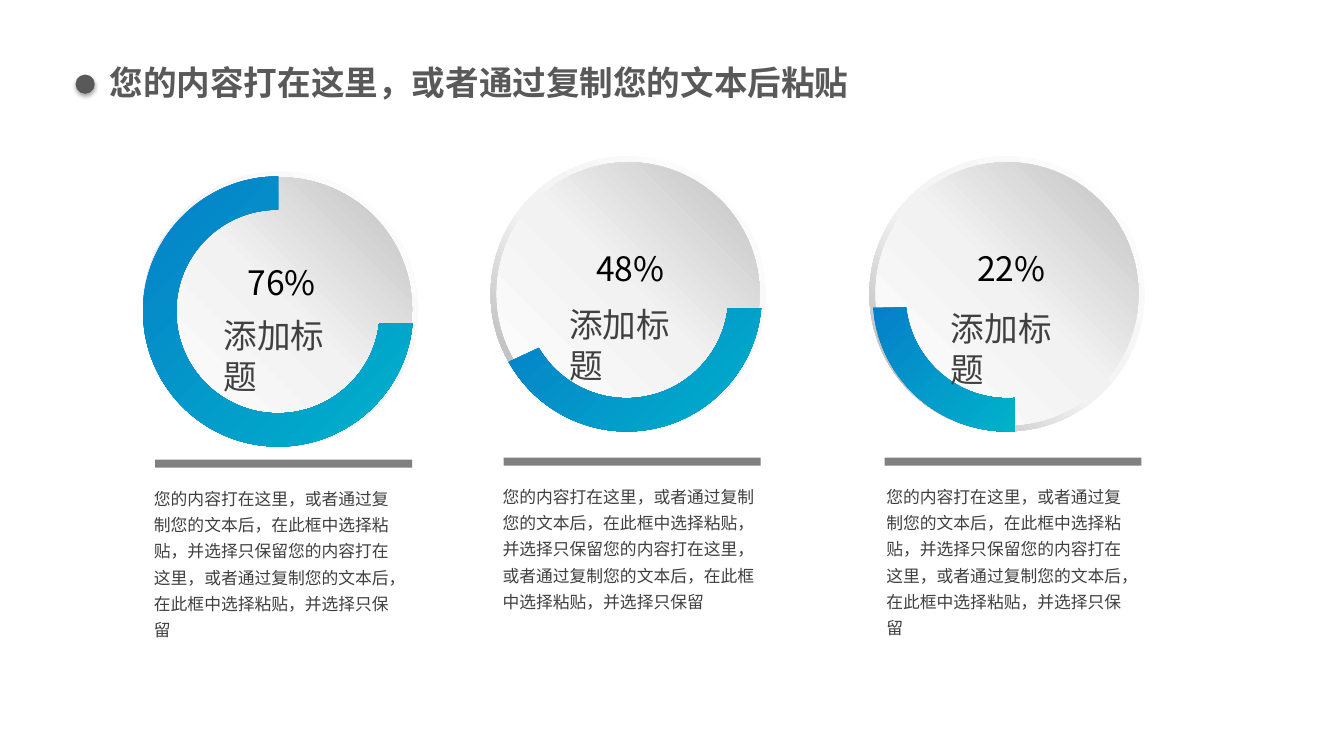
from math import ceil, cos, floor, radians, sin, tan

from lxml.etree import SubElement
from pptx import Presentation
from pptx.dml.color import RGBColor
from pptx.enum.shapes import MSO_SHAPE as Preset
from pptx.oxml.ns import qn
from pptx.util import Inches, Pt

HEADING = "您的内容打在这里，或者通过复制您的文本后粘贴"
LABEL = "添加标题"
BODY = (
    "您的内容打在这里，或者通过复制您的文本后，在此框中选择粘贴，并选择只保留"
    "您的内容打在这里，或者通过复制您的文本后，在此框中选择粘贴，并选择只保留"
)
DIALS = [
    {"percent": "76%", "left": 1.42, "top": 1.7, "arc_center": 2.76,
     "outer": (5.1, 270), "inner": (6.8, 270), "percent_at": (2.36, 2.55),
     "label_at": (2.12, 3.08), "bar_at": (1.54, 4.56), "body_at": (1.43, 4.74),
     "body_size": (2.63, 1.94)},
    {"percent": "48%", "left": 4.87, "top": 1.55, "arc_center": 6.22,
     "outer": (5.1, 151), "inner": (6.8, 149.6), "percent_at": (5.82, 2.41),
     "label_at": (5.55, 2.97), "bar_at": (5, 4.54), "body_at": (4.89, 4.72),
     "body_size": (2.75, 1.68)},
    {"percent": "22%", "left": 8.63, "top": 1.55, "arc_center": 10,
     "outer": (87, 175.3), "inner": (86, 173.8), "percent_at": (9.6, 2.41),
     "label_at": (9.34, 3.01), "bar_at": (8.78, 4.54), "body_at": (8.7, 4.72),
     "body_size": (2.67, 1.94)},
]
COLORS = {"heading": "595959", "bar": "808080", "text": "404040", "percent": "000000"}
RING_STOPS = [(0, "FFFFFF"), (55, "F2F2F2"), (100, "A6A6A6")]
FACE_STOPS = [(0, "FFFFFF"), (51, "F2F2F2"), (100, "BFBFBF")]
ARC_STOPS = [(0, "067FC9"), (100, "00B2CA")]
FONT = "Noto Sans CJK SC"
RING_SIZE, FACE_SIZE, RING_RATIO = 2.73, 2.61, 0.05
ARC_DROP, OUTER_RADIUS, INNER_RADIUS = 1.39, 1.34, 1.01


def add_text(slide, text, left, top, width, height, size=24, color="text",
             bold=False, spacing=28.8):
    box = slide.shapes.add_textbox(*map(Inches, (left, top, width, height)))
    box.text_frame.word_wrap = True
    paragraph = box.text_frame.paragraphs[0]
    paragraph.line_spacing = Pt(spacing)
    run = paragraph.add_run()
    run.text = text
    font = run.font
    font.size, font.bold, font.name = Pt(size), bold, FONT
    font.color.rgb = RGBColor.from_string(COLORS[color])
    SubElement(run._r.get_or_add_rPr(), qn("a:ea"), typeface=FONT)


def add_preset(slide, preset, left, top, width, height, color=None):
    shape = slide.shapes.add_shape(preset, *map(Inches, (left, top, width, height)))
    shape.shadow.inherit = False
    shape.line.fill.background()
    if color:
        shape.fill.solid()
        shape.fill.fore_color.rgb = RGBColor.from_string(COLORS[color])
    return shape


def fill_gradient(shape, stops, angle):
    shape.fill.gradient()
    gradient = shape._element.spPr.find(qn("a:gradFill"))
    for child in list(gradient):
        gradient.remove(child)
    stop_list = SubElement(gradient, qn("a:gsLst"))
    for position, color in stops:
        stop = SubElement(stop_list, qn("a:gs"), pos=str(position * 1000))
        SubElement(stop, qn("a:srgbClr"), val=color)
    SubElement(gradient, qn("a:lin"), ang=str(angle * 60000), scaled="0")


def add_shadow(shape):
    effects = shape._element.spPr.find(qn("a:effectLst"))
    shadow = SubElement(effects, qn("a:outerShdw"), blurRad=str(Pt(3.1)),
                        dist=str(Pt(1.8)), dir=str(90 * 60000), rotWithShape="0")
    color = SubElement(shadow, qn("a:srgbClr"), val="000000")
    SubElement(color, qn("a:alpha"), val="35000")


def arc_points(center_x, center_y, radius, start, end):
    """Return Bezier points of an arc that is split at each quarter turn."""
    quarters = range(floor(start / 90) + 1, ceil(end / 90))
    angles = [radians(angle) for angle in (start, *(90 * q for q in quarters), end)]

    def point(angle, reach):
        return (Inches(center_x + radius * (cos(angle) - reach * sin(angle))),
                Inches(center_y + radius * (sin(angle) + reach * cos(angle))))

    points = [point(angles[0], 0)]
    for first, last in zip(angles, angles[1:]):
        reach = 4 / 3 * tan((last - first) / 4)
        points += [point(first, reach), point(last, -reach), point(last, 0)]
    return points


def curve_lines(path_element, lines):
    for index in range(0, len(lines), 3):
        curve = path_element.makeelement(qn("a:cubicBezTo"))
        lines[index].addprevious(curve)
        for line in lines[index:index + 3]:
            curve.append(line[0])
            path_element.remove(line)


def add_arc(slide, dial):
    center = dial["arc_center"], dial["top"] + ARC_DROP
    outer = arc_points(*center, OUTER_RADIUS, *dial["outer"])
    inner = arc_points(*center, INNER_RADIUS, *dial["inner"])
    points = outer + inner[::-1]
    builder = slide.shapes.build_freeform(*points[0], scale=1.0)
    builder.add_line_segments(points[1:], close=True)
    arc = builder.convert_to_shape()
    outline = next(arc._element.iter(qn("a:path")))
    lines = outline.findall(qn("a:lnTo"))
    curve_lines(outline, lines[:len(outer) - 1])
    curve_lines(outline, lines[len(outer):])
    arc.shadow.inherit = False
    arc.line.fill.background()
    fill_gradient(arc, ARC_STOPS, 45)


def add_dial(slide, dial):
    left, top = dial["left"], dial["top"]
    ring = add_preset(slide, Preset.DONUT, left, top, RING_SIZE, RING_SIZE)
    ring.adjustments[0] = RING_RATIO
    fill_gradient(ring, RING_STOPS, 135)
    inset = (RING_SIZE - FACE_SIZE) / 2
    face = add_preset(slide, Preset.OVAL, left + inset, top + inset, FACE_SIZE, FACE_SIZE)
    fill_gradient(face, FACE_STOPS, 315)
    add_arc(slide, dial)
    add_text(slide, dial["percent"], *dial["percent_at"], 0.9, 0.5, color="percent")
    add_text(slide, LABEL, *dial["label_at"], 1.21, 0.4)
    add_preset(slide, Preset.RECTANGLE, *dial["bar_at"], 2.55, 0.08, "bar")
    add_text(slide, BODY, *dial["body_at"], *dial["body_size"], size=12, spacing=18.7)


def main():
    """Build the slide with three percentage dials."""
    presentation = Presentation()
    presentation.slide_width, presentation.slide_height = Inches(13.34), Inches(7.5)
    slide = presentation.slides.add_slide(presentation.slide_layouts[6])
    add_text(slide, HEADING, 0.99, 0.57, 8.91, 0.5, color="heading", bold=True)
    add_shadow(add_preset(slide, Preset.OVAL, 0.75, 0.74, 0.19, 0.19, "heading"))
    for dial in DIALS:
        add_dial(slide, dial)
    presentation.save("out.pptx")


if __name__ == "__main__":
    main()
